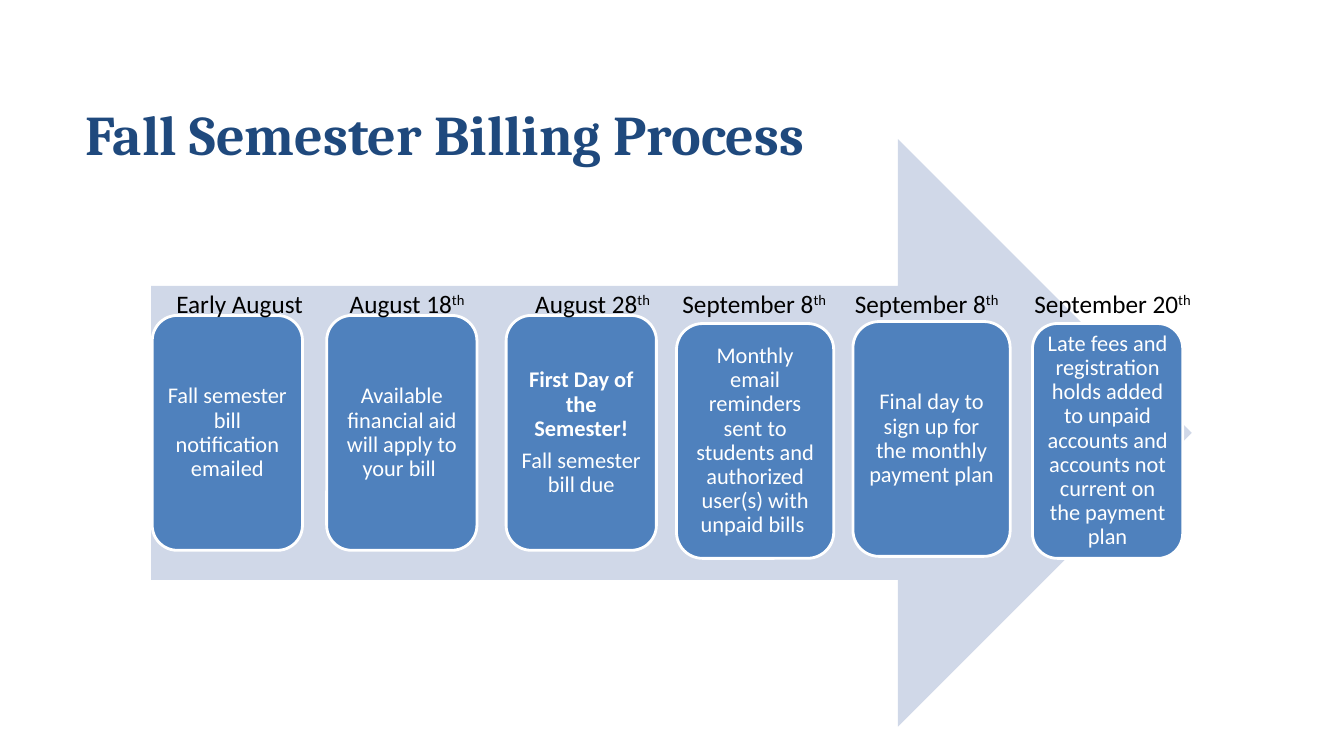
import pptx
import pptx.dml.color
import pptx.enum.shapes
import pptx.enum.text
import pptx.util

Inches = pptx.util.Inches
Pt = pptx.util.Pt
SHAPES = pptx.enum.shapes.MSO_SHAPE
ANCHOR = pptx.enum.text.MSO_ANCHOR


def color(hex_value):
    return pptx.dml.color.RGBColor.from_string(hex_value)


def style_runs(paragraph, size, hex_value, name="Calibri", bold=False):
    for run in paragraph.runs:
        run.font.name = name
        run.font.size = Pt(size)
        run.font.bold = bold
        run.font.color.rgb = color(hex_value)


presentation = pptx.Presentation()
presentation.slide_width = Inches(13.33)
presentation.slide_height = Inches(7.5)
slide = presentation.slides.add_slide(presentation.slide_layouts[6])

# Title
title = slide.shapes.add_textbox(Inches(0.75), Inches(0.32), Inches(9), Inches(2))
title.text_frame.word_wrap = True
title.text_frame.vertical_anchor = ANCHOR.MIDDLE
title.text_frame.text = "Fall Semester Billing Process"
style_runs(title.text_frame.paragraphs[0], 40, "1F497D", "Cambria", True)

# Background arrow
arrow = slide.shapes.add_shape(
    SHAPES.RIGHT_ARROW, Inches(1.5), Inches(1.38), Inches(10.32), Inches(5.83))
arrow.shadow.inherit = False
arrow.fill.solid()
arrow.fill.fore_color.rgb = color("D0D8E8")
arrow.line.fill.background()

# Step cards: left, top, width, paragraphs (bold, text)
steps = [
    (1.51, 3.13, 1.49, [(False, "Fall semester bill notification emailed")]),
    (3.24, 3.13, 1.49, [(False, "Available financial aid will apply to your bill ")]),
    (5.02, 3.13, 1.49, [(True, "First Day of the Semester!"),
                        (False, "Fall semester bill due")]),
    (6.71, 3.21, 1.56, [(False, "Monthly email reminders sent to students and "
                                "authorized user(s) with unpaid bills ")]),
    (8.46, 3.19, 1.56, [(False, "Final day to sign up for the monthly payment plan")]),
    (10.24, 3.21, 1.49, [(False, "Late fees and registration holds added to unpaid accounts "
                                 "and accounts not current on the payment plan")]),
]
for left, top, width, lines in steps:
    card = slide.shapes.add_shape(
        SHAPES.ROUNDED_RECTANGLE, Inches(left), Inches(top), Inches(width), Inches(2.33))
    card.shadow.inherit = False
    card.fill.solid()
    card.fill.fore_color.rgb = color("4F81BD")
    card.line.color.rgb = color("FFFFFF")
    card.line.width = Pt(2)
    frame = card.text_frame
    frame.word_wrap = True
    frame.vertical_anchor = ANCHOR.MIDDLE
    frame.margin_left = frame.margin_right = Inches(0.07)
    frame.margin_top = frame.margin_bottom = Inches(0.07)
    frame.text = "\n".join(text for _, text in lines)
    for paragraph, (bold, _) in zip(frame.paragraphs, lines):
        paragraph.alignment = pptx.enum.text.PP_ALIGN.CENTER
        paragraph.line_spacing = 0.9
        paragraph.space_after = Pt(5.6)
        style_runs(paragraph, 16, "FFFFFF", bold=bold)

# Date labels: left, width, date, ordinal suffix
dates = [
    (1.65, 1.51, "Early August", ""),
    (3.37, 1.39, "August 18", "th"),
    (5.21, 1.51, "August 28", "th"),
    (6.67, 1.91, "September 8", "th"),
    (8.38, 1.89, "September 8", "th"),
    (10.16, 2, "September 20", "th"),
]
for left, width, date, suffix in dates:
    label = slide.shapes.add_textbox(Inches(left), Inches(2.81), Inches(width), Inches(0.4))
    label.text_frame.word_wrap = True
    label.text_frame.auto_size = pptx.enum.text.MSO_AUTO_SIZE.SHAPE_TO_FIT_TEXT
    paragraph = label.text_frame.paragraphs[0]
    paragraph.text = date
    if suffix:
        ordinal = paragraph.add_run()
        ordinal.text = suffix
        ordinal._r.get_or_add_rPr().set("baseline", "30000")
    style_runs(paragraph, 18, "000000")

presentation.save("out.pptx")
